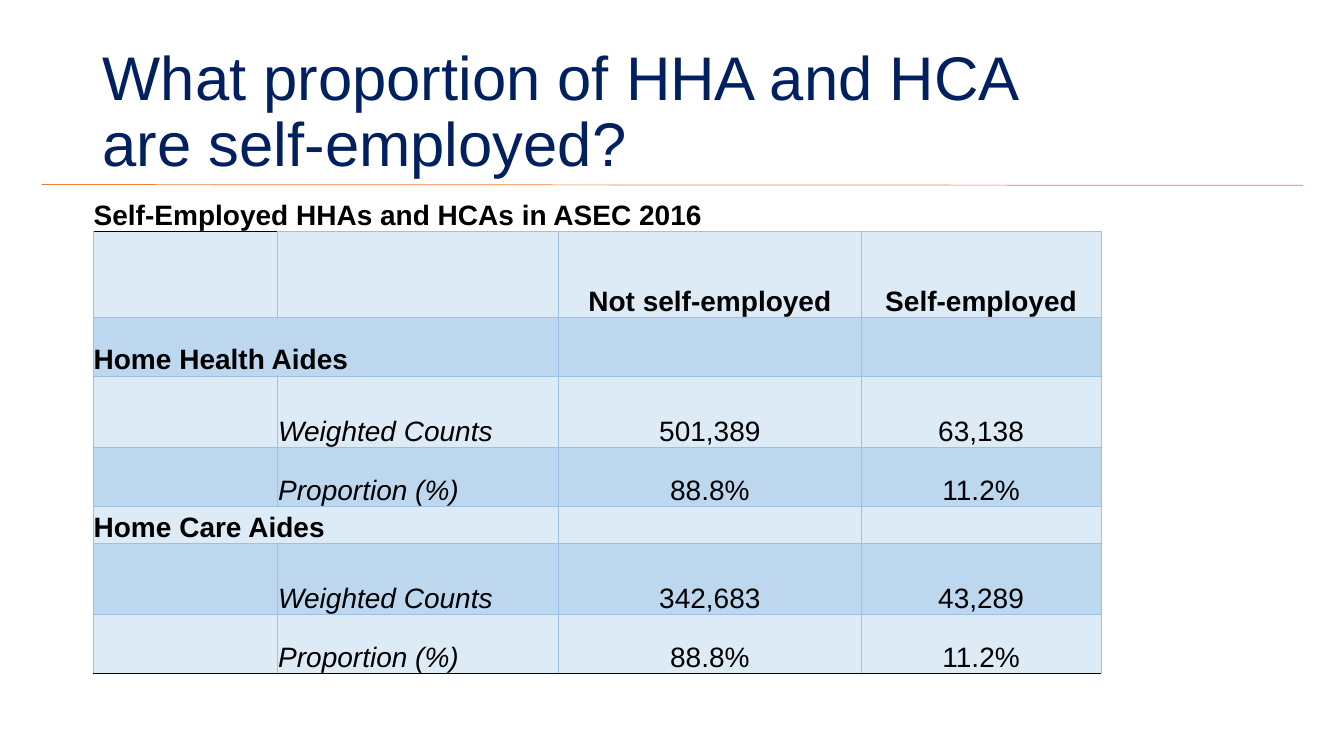
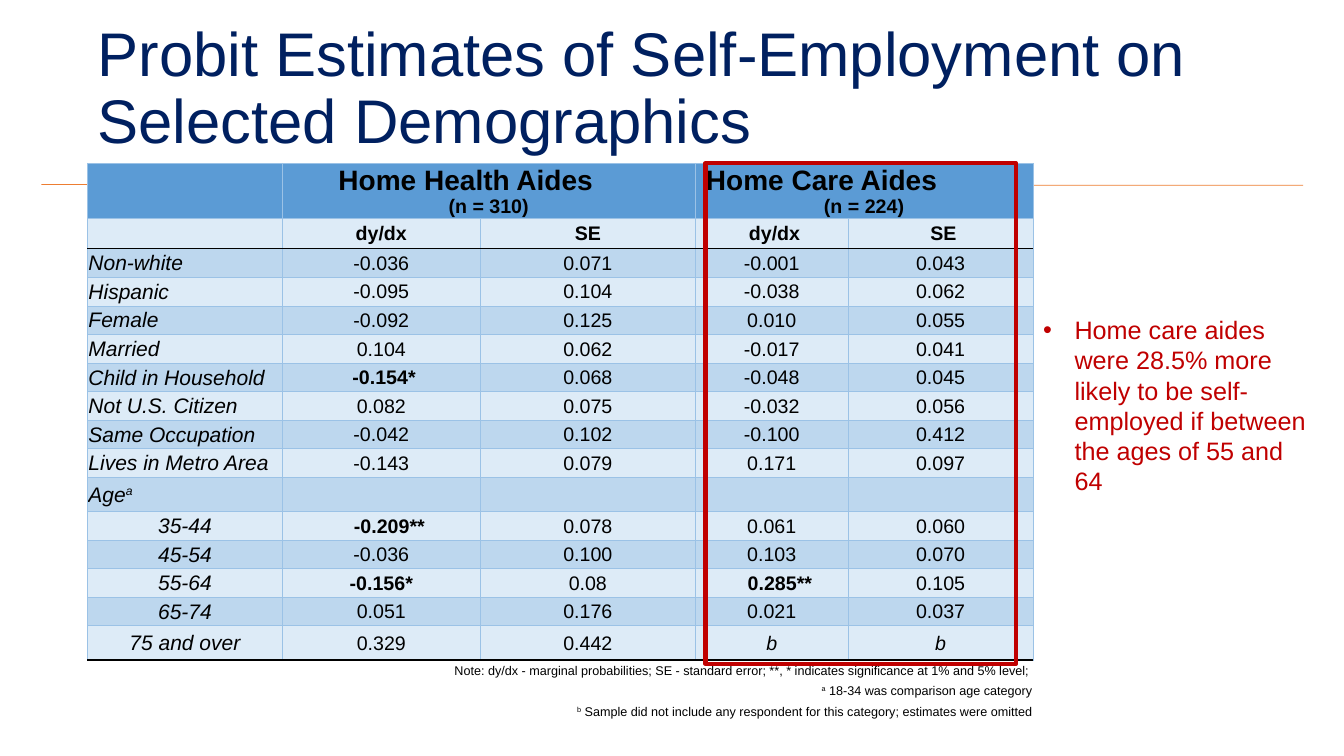
from lxml import etree
from pptx import Presentation
from pptx.dml.color import RGBColor
from pptx.enum.shapes import MSO_CONNECTOR, MSO_SHAPE
from pptx.enum.text import MSO_ANCHOR, MSO_AUTO_SIZE, PP_ALIGN
from pptx.oxml.ns import qn
from pptx.util import Cm, Pt

LEFT, CENTER, RIGHT = PP_ALIGN.LEFT, PP_ALIGN.CENTER, PP_ALIGN.RIGHT
MIDDLE, BOTTOM = MSO_ANCHOR.MIDDLE, MSO_ANCHOR.BOTTOM
STRAIGHT, RECTANGLE = MSO_CONNECTOR.STRAIGHT, MSO_SHAPE.RECTANGLE
GROW = MSO_AUTO_SIZE.SHAPE_TO_FIT_TEXT

FONT = "Arial"
BLACK = RGBColor(0x00, 0x00, 0x00)
NAVY = RGBColor(0x00, 0x20, 0x60)
ORANGE = RGBColor(0xED, 0x7D, 0x31)
RED = RGBColor(0xC0, 0x00, 0x00)
HEADER_BLUE = RGBColor(0x5B, 0x9B, 0xD5)
BANDS = (RGBColor(0xBD, 0xD7, 0xEE), RGBColor(0xDD, 0xEB, 0xF7))
GRID = (RGBColor(0x9B, 0xC2, 0xE6), 0.5)


def write(paragraph, text, size, color=BLACK, bold=False, italic=False, align=LEFT):
    """Write text; every second part between ^ marks is superscript."""
    first, *others = text.split("^")
    paragraph.text = first
    paragraph.alignment = align
    for i, part in enumerate(others):
        run = paragraph.add_run()
        run.text = part
        if i % 2 == 0:
            run.font._element.set("baseline", "30000")
    for run in paragraph.runs:
        font = run.font
        font.name, font.size, font.bold, font.italic = FONT, Pt(size), bold, italic
        font.color.rgb = color
    if not text:
        paragraph._p.get_or_add_endParaRPr().set("sz", str(size * 100))


def style_cell(cell, anchor, fill, edges):
    """Set anchor, margins, fill and the edges given as {side: (colour, points)}."""
    cell.vertical_anchor = anchor
    cell.margin_left = cell.margin_right = cell.margin_top = Cm(0.02)
    cell.margin_bottom = 0
    if fill is None:
        cell.fill.background()
    else:
        cell.fill.solid()
        cell.fill.fore_color.rgb = fill
    properties = cell._tc.get_or_add_tcPr()
    for position, side in enumerate("LRTB"):
        color, points = edges.get(side, (None, 0))
        line = etree.Element(qn(f"a:ln{side}"), w=str(int(Pt(points))))
        if color is None:
            etree.SubElement(line, qn("a:noFill"))
        else:
            paint = etree.SubElement(line, qn("a:solidFill"))
            etree.SubElement(paint, qn("a:srgbClr"), val=str(color))
        properties.insert(position, line)


prs = Presentation()
prs.slide_width, prs.slide_height = Cm(33.87), Cm(19.05)
blank = prs.slide_layouts[6]

counts_rows = [
    ("Self-Employed HHAs and HCAs in ASEC 2016", "", "", ""),
    ("", "", "Not self-employed", "Self-employed"),
    ("Home Health Aides", "", "", ""),
    ("", "Weighted Counts", "501,389", "63,138"),
    ("", "Proportion (%)", "88.8%", "11.2%"),
    ("Home Care Aides", "", "", ""),
    ("", "Weighted Counts", "342,683", "43,289"),
    ("", "Proportion (%)", "88.8%", "11.2%"),
]
probit_rows = [
    ("", "Home Health Aides", "", "Home Care Aides", ""),
    ("", "dy/dx", "SE", "dy/dx", "SE"),
    ("Non-white", "-0.036", "0.071", "-0.001", "0.043"),
    ("Hispanic", "-0.095", "0.104", "-0.038", "0.062"),
    ("Female", "-0.092", "0.125", "0.010", "0.055"),
    ("Married", "0.104", "0.062", "-0.017", "0.041"),
    ("Child in Household", "-0.154*", "0.068", "-0.048", "0.045"),
    ("Not U.S. Citizen", "0.082", "0.075", "-0.032", "0.056"),
    ("Same Occupation", "-0.042", "0.102", "-0.100", "0.412"),
    ("Lives in Metro Area", "-0.143", "0.079", "0.171", "0.097"),
    ("Age^a", "", "", "", ""),
    ("35-44", "-0.209**", "0.078", "0.061", "0.060"),
    ("45-54", "-0.036", "0.100", "0.103", "0.070"),
    ("55-64", "-0.156*", "0.08", "0.285**", "0.105"),
    ("65-74", "0.051", "0.176", "0.021", "0.037"),
    ("75 and over", "0.329", "0.442", "b", "b"),
    ("Note: dy/dx - marginal probabilities; SE - standard error; "
     "**, * indicates significance at 1% and 5% level; ", "", "", "", ""),
    ("^a^ 18-34 was comparison age category", "", "", "", ""),
    ("^b^ Sample did not include any respondent for this category; "
     "estimates were omitted", "", "", "", ""),
]
AGE_ROW, LAST_ROW = 10, 15

# Shared frame: rule, table grid and title
tables = []
for title, title_at, rows, table_at, widths, heights in (
    ("What proportion of HHA and HCA\vare self-employed?", (2.34, 1.02),
     counts_rows, (2.34, 4.32), (4.65, 7.09, 7.62, 6.05),
     (1.5, 2.18, 1.47, 1.81, 1.47, 0.93, 1.81, 1.47)),
    ("Probit Estimates of Self-Employment on Selected Demographics", (2.21, 0.43),
     probit_rows, (2.21, 4.11), (4.9, 5, 5.41, 3.86, 4.65),
     (1.4, 0.76, *[0.72] * 8, 0.86, *[0.72] * 4, 0.86, 0.53, 0.5, 0.53)),
):
    slide = prs.slides.add_slide(blank)
    rule = slide.shapes.add_connector(STRAIGHT, Cm(1.04), Cm(4.65), Cm(32.84), Cm(4.67))
    rule.line.color.rgb = ORANGE
    rule.line.width = Pt(0.5)
    etree.SubElement(rule._element.spPr, qn("a:effectLst"))

    table = slide.shapes.add_table(
        len(rows), len(widths), *map(Cm, table_at), Cm(sum(widths)), Cm(sum(heights))
    ).table
    table.first_row = table.horz_banding = False
    for column, width in zip(table.columns, widths):
        column.width = Cm(width)
    for row, height in zip(table.rows, heights):
        row.height = Cm(height)
    tables.append(table)

    heading = slide.shapes.add_textbox(*map(Cm, title_at), Cm(29.21), Cm(3.68)).text_frame
    heading.word_wrap = True
    heading.vertical_anchor = MIDDLE
    write(heading.paragraphs[0], title, 44, NAVY)
    heading.paragraphs[0].line_spacing = 0.9

counts, probit = tables

# Slide 1: counts and proportions
thin_black = (BLACK, 0.5)
for r, row in enumerate(counts_rows):
    for c, text in enumerate(row):
        if r == 0:
            fill, edges = None, {"B": GRID if c else thin_black}
        else:
            fill, edges = BANDS[r % 2], dict.fromkeys("LRTB", GRID)
        if (r, c) == (1, 0):
            edges["T"] = thin_black
        if r == len(counts_rows) - 1:
            edges["B"] = thin_black
        cell = counts.cell(r, c)
        write(cell.text_frame.paragraphs[0], text, 20, bold=c == 0 or r == 1,
              italic=c == 1, align=CENTER if c > 1 else LEFT)
        style_cell(cell, BOTTOM, fill, edges)
counts.cell(0, 0).merge(counts.cell(0, 3))
for r in (2, 5):
    counts.cell(r, 0).merge(counts.cell(r, 1))

# Slide 2: probit estimates
thick_black = (BLACK, 1)
nudges = {(1, 3): 0.14, (1, 4): 0.14, (6, 1): 0.14, (11, 1): 0.41, (13, 3): 0.41}
for r, row in enumerate(probit_rows):
    for c, text in enumerate(row):
        is_note = r > LAST_ROW
        edges = {} if is_note else dict.fromkeys("LRTB", GRID)
        if r in (1, LAST_ROW):
            edges["B"] = thick_black
        if r in (2, LAST_ROW + 1):
            edges["T"] = thick_black
        fill = None if is_note else BANDS[r % 2] if r else HEADER_BLUE
        if is_note:
            size, align = 9, RIGHT
        elif c == 0:
            size, align = 15, LEFT if r <= AGE_ROW else CENTER
        else:
            size, align = 14, CENTER
        cell = probit.cell(r, c)
        paragraph = cell.text_frame.paragraphs[0]
        write(paragraph, text, size, bold=r == 1 or "*" in text and not is_note,
              italic=not is_note and (c == 0 or text == "b"), align=align)
        if (r, c) in nudges:
            paragraph._p.get_or_add_pPr().set("marL", str(Cm(nudges[r, c])))
        style_cell(cell, MIDDLE, fill, edges)

for c, sample, indent in ((1, "(n = 310)", 1.4), (3, "(n = 224)", 0.25)):
    group = probit.cell(0, c)
    group.merge(probit.cell(0, c + 1))
    name = group.text_frame.paragraphs[0]
    write(name, probit_rows[0][c], 20, bold=True)
    name._p.get_or_add_pPr().set("marL", str(Cm(indent)))
    write(group.text_frame.add_paragraph(), sample, 14, bold=True, align=CENTER)
for r in range(LAST_ROW + 1, len(probit_rows)):
    probit.cell(r, 0).merge(probit.cell(r, 4))

# Slide 2: highlight around the home care aides
highlight = slide.shapes.add_shape(RECTANGLE, Cm(17.78), Cm(4.11), Cm(7.82), Cm(12.62))
highlight.shadow.inherit = False
highlight.fill.background()
highlight.line.color.rgb = RED
highlight.line.width = Pt(3)

# Slide 2: finding
finding = slide.shapes.add_textbox(Cm(26.04), Cm(7.8), Cm(7.19), Cm(5.64)).text_frame
finding.word_wrap = True
finding.auto_size = GROW
paragraph = finding.paragraphs[0]
write(paragraph, "Home care aides were 28.5% more likely to be self-employed "
      "if between the ages of 55 and 64", 18, RED)
bullet_properties = paragraph._p.get_or_add_pPr()
bullet_properties.set("marL", str(Cm(0.79)))
bullet_properties.set("indent", str(-Cm(0.79)))
etree.SubElement(bullet_properties, qn("a:buFont"), typeface=FONT)
etree.SubElement(bullet_properties, qn("a:buChar"), char="•")

prs.save("out.pptx")
